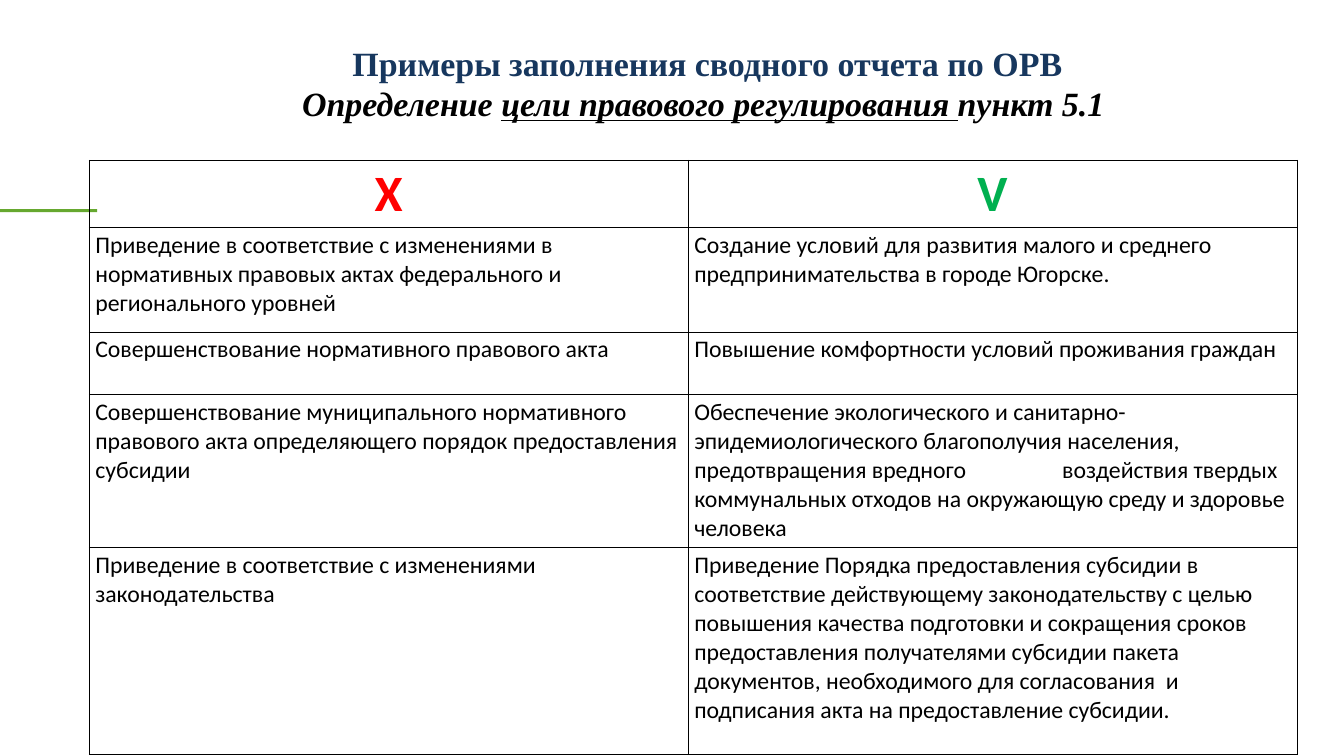
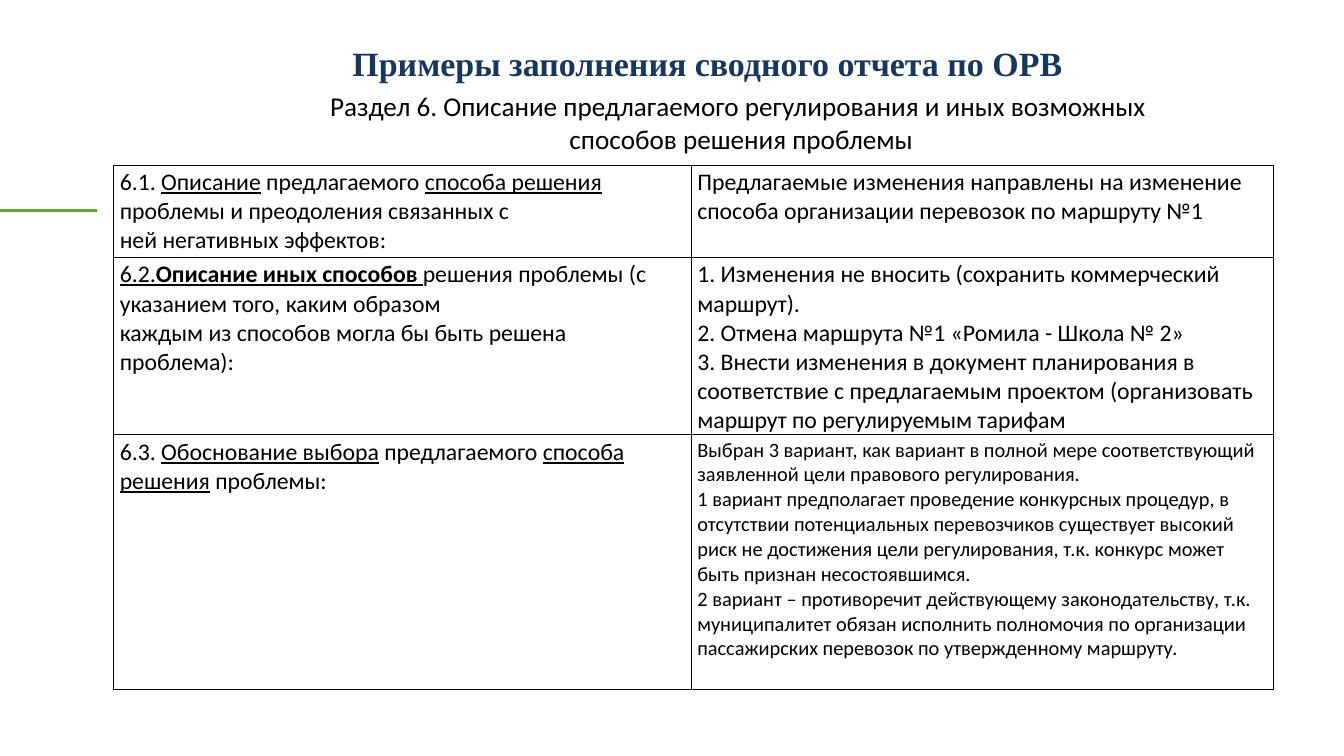
from lxml import etree
from pptx import Presentation
from pptx.dml.color import RGBColor
from pptx.enum.shapes import MSO_SHAPE
from pptx.enum.text import MSO_AUTO_SIZE, PP_ALIGN
from pptx.oxml import parse_xml
from pptx.oxml.ns import nsdecls, qn
from pptx.util import Inches, Pt

COLORS = {"accent": "66A82F", "title": "17375E", "text": "000000",
          "wrong": "FF0000", "right": "00B050"}
BODY_FONT = "Calibri"
TITLE_FONT = "Times New Roman"
TITLE = "Примеры заполнения сводного отчета по ОРВ"
UNDERLINED = {"underline": True}


def write(paragraph, text, size=28, font=BODY_FONT, color="text",
          bold=False, italic=False, underline=False):
    run = paragraph.add_run()
    run.text = text
    run.font.name = font
    run.font.size = Pt(size)
    run.font.bold = bold
    run.font.italic = italic
    run.font.underline = underline
    run.font.color.rgb = RGBColor.from_string(COLORS[color])


class ReportDeck:
    """Holds the shared style and the current slide."""

    def __init__(self):
        self.presentation = Presentation()
        self.presentation.slide_width = Inches(21.99)
        self.presentation.slide_height = Inches(12.37)
        self.slide = None

    def add_slide(self):
        self.slide = self.presentation.slides.add_slide(self.presentation.slide_layouts[6])
        bar = self.slide.shapes.add_shape(
            MSO_SHAPE.RECTANGLE, 0, Inches(3.42), Inches(1.59), Inches(0.05))
        bar.shadow.inherit = False
        bar.fill.solid()
        bar.fill.fore_color.rgb = RGBColor.from_string(COLORS["accent"])
        bar.line.fill.background()

    def fill_frame(self, frame, paragraphs, alignment, **base):
        for index, runs in enumerate(paragraphs):
            paragraph = frame.add_paragraph() if index else frame.paragraphs[0]
            paragraph.alignment = alignment
            runs = [(runs, {})] if isinstance(runs, str) else runs
            if any("\t" in text for text, style in runs):
                self.add_tab(paragraph, 6.02)
            for text, style in runs:
                write(paragraph, text, **{**base, **style})

    def add_tab(self, paragraph, position):
        properties = paragraph._p.get_or_add_pPr()
        tabs = etree.SubElement(properties, qn("a:tabLst"))
        etree.SubElement(tabs, qn("a:tab"), pos=str(Inches(position)), algn="l")

    def add_text(self, left, top, width, height, paragraphs, **base):
        box = self.slide.shapes.add_textbox(
            Inches(left), Inches(top), Inches(width), Inches(height))
        frame = box.text_frame
        frame.word_wrap = True
        frame.auto_size = MSO_AUTO_SIZE.SHAPE_TO_FIT_TEXT
        self.fill_frame(frame, paragraphs, PP_ALIGN.CENTER, **base)

    def add_title(self, height, *subtitles):
        heading = [(TITLE, {"color": "title"})]
        self.add_text(3.88, 0.64, 15.39, height, [heading, *subtitles],
                      size=40, font=TITLE_FONT, bold=True)

    def add_borders(self, cell):
        properties = cell._tc.get_or_add_tcPr()
        for side in "LRTB":
            properties.append(parse_xml(
                f'<a:ln{side} {nsdecls("a")} w="{Pt(1)}"><a:solidFill>'
                f'<a:srgbClr val="{COLORS["text"]}"/></a:solidFill></a:ln{side}>'))

    def add_table(self, left, top, widths, heights, rows, header=None):
        rows = [header, *rows] if header else rows
        frame = self.slide.shapes.add_table(
            len(rows), len(widths), Inches(left), Inches(top),
            Inches(sum(widths)), Inches(sum(heights)))
        table = frame.table
        table.first_row = False
        table.horz_banding = False
        for column, width in zip(table.columns, widths):
            column.width = Inches(width)
        for row, height, contents in zip(table.rows, heights, rows):
            row.height = Inches(height)
            alignment = PP_ALIGN.CENTER if contents is header else PP_ALIGN.LEFT
            for cell, paragraphs in zip(row.cells, contents):
                self.add_borders(cell)
                cell.fill.background()
                self.fill_frame(cell.text_frame, paragraphs, alignment)


def mark(text, color):
    return [[(text, {"size": 60, "bold": True, "color": color})]]


def small(text):
    return [(text, {"size": 24})]


GOALS = [
    (["Приведение в соответствие с изменениями в нормативных правовых актах "
      "федерального и регионального уровней"],
     ["Создание условий для развития малого и среднего предпринимательства в городе Югорске."]),
    (["Совершенствование нормативного правового акта"],
     ["Повышение комфортности условий проживания граждан"]),
    (["Совершенствование муниципального нормативного правового акта определяющего "
      "порядок предоставления субсидии"],
     ["Обеспечение экологического и санитарно-эпидемиологического благополучия населения, "
      "предотвращения вредного\tвоздействия твердых коммунальных отходов на окружающую "
      "среду и здоровье человека"]),
    (["Приведение в соответствие с изменениями законодательства"],
     ["Приведение Порядка предоставления субсидии в соответствие действующему "
      "законодательству с целью",
      "повышения качества подготовки и сокращения сроков предоставления получателями "
      "субсидии пакета документов, необходимого для согласования  и подписания акта "
      "на предоставление субсидии."]),
]

REGULATION = [
    ([[("6.1. ", {}), ("Описание", UNDERLINED), (" предлагаемого ", {}),
       ("способа решения ", UNDERLINED), ("проблемы и преодоления связанных с", {})],
      "ней негативных эффектов:"],
     ["Предлагаемые изменения направлены на изменение способа организации перевозок "
      "по маршруту №1"]),
    ([[("6.2.", UNDERLINED), ("Описание иных способов ", {"bold": True, **UNDERLINED}),
       ("решения проблемы (с указанием того, каким образом", {})],
      "каждым из способов могла бы быть решена проблема):"],
     ["1. Изменения не вносить (сохранить коммерческий маршрут).",
      "2. Отмена маршрута №1 «Ромила - Школа № 2»",
      "3. Внести изменения в документ планирования в соответствие с предлагаемым "
      "проектом (организовать маршрут по регулируемым тарифам"]),
    ([[("6.3. ", {}), ("Обоснование выбора", UNDERLINED), (" предлагаемого ", {}),
       ("способа", UNDERLINED), (" ", {}), ("решения", UNDERLINED), (" проблемы:", {})]],
     [small("Выбран 3 вариант, как вариант в полной мере соответствующий заявленной "
            "цели правового регулирования."),
      small("1 вариант предполагает проведение конкурсных процедур, в отсутствии "
            "потенциальных перевозчиков существует высокий риск не достижения цели "
            "регулирования, т.к. конкурс может быть признан несостоявшимся."),
      small("2 вариант – противоречит действующему законодательству, т.к. муниципалитет "
            "обязан исполнить полномочия по организации пассажирских перевозок по "
            "утвержденному маршруту.")]),
]


def main():
    deck = ReportDeck()

    deck.add_slide()
    deck.add_title(1.45, [
        ("Определение ", {"italic": True}),
        ("цели правового регулирования ", {"italic": True, **UNDERLINED}),
        ("пункт 5.1 ", {"italic": True})])
    deck.add_table(1.46, 2.62, [9.8, 9.96], [1.09, 1.71, 1.03, 2.5, 3.38], GOALS,
                   header=(mark("X", "wrong"), mark("V", "right")))

    deck.add_slide()
    deck.add_title(0.77)
    deck.add_table(1.86, 2.7, [9.45, 9.53], [1.51, 2.9, 4.16], REGULATION)
    deck.add_text(4.98, 1.42, 14.3, 1.18, [
        "Раздел 6. Описание предлагаемого регулирования и иных возможных ",
        "способов решения проблемы"], size=32)

    deck.presentation.save("out.pptx")


if __name__ == "__main__":
    main()
